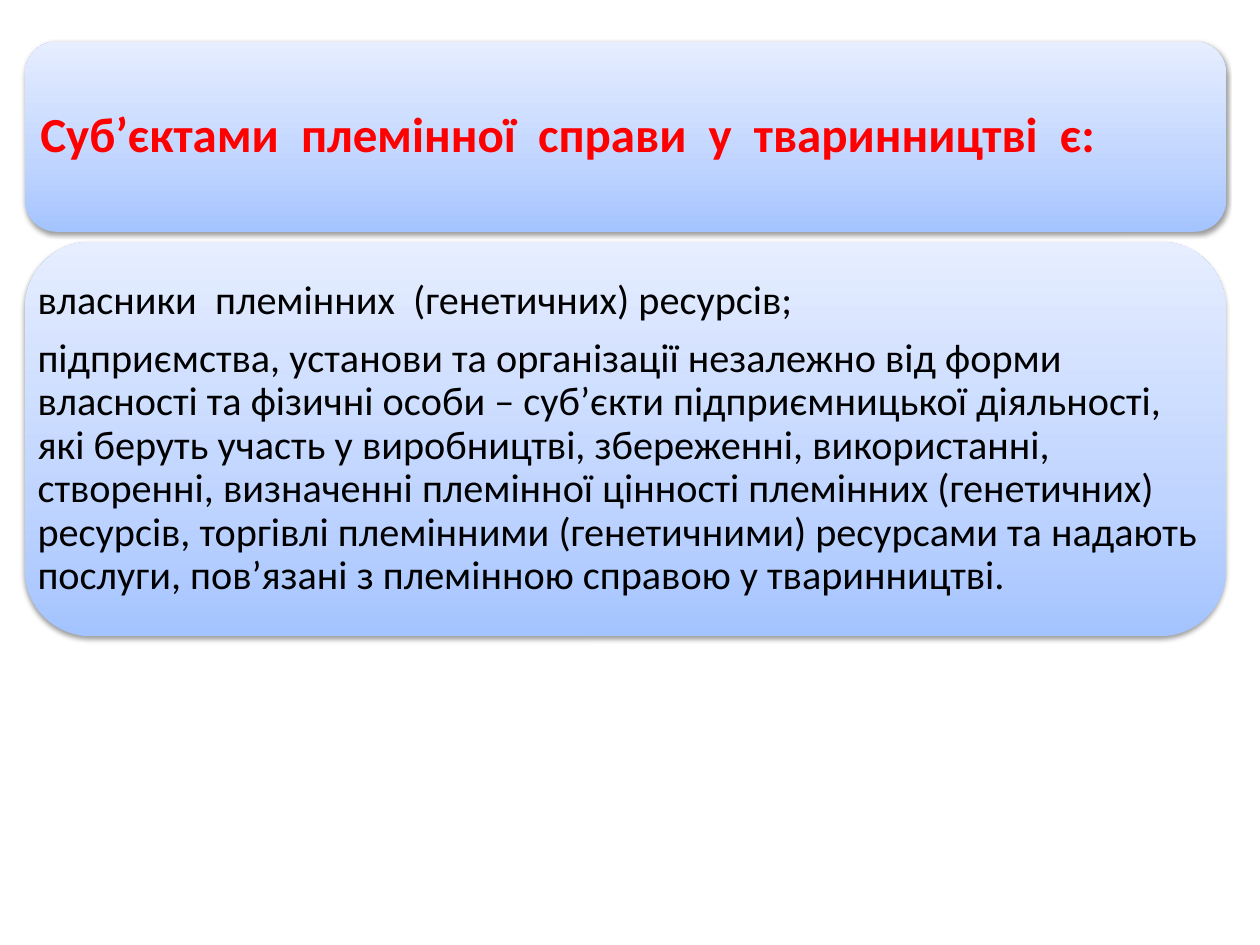
from lxml import etree
from pptx import Presentation
from pptx.dml.color import RGBColor
from pptx.enum import shapes, text
from pptx.oxml import ns
from pptx.util import Inches, Pt

GRADIENT = [(0, "A4C4FF"), (0.35, "BFD4FF"), (1, "E6EEFF")]


def add_child(parent, tag, **attributes):
    return etree.SubElement(parent, ns.qn(tag), {k: str(v) for k, v in attributes.items()})


def style_panel(panel):
    """Give a panel the upward blue gradient, no outline and a soft shadow below."""
    panel.fill.gradient()
    panel.fill.gradient_angle = 90
    properties = panel._element.spPr
    stops = properties.find(".//" + ns.qn("a:gsLst"))
    for old_stop in list(stops):
        stops.remove(old_stop)
    for position, color in GRADIENT:
        stop = add_child(stops, "a:gs", pos=round(position * 100000))
        add_child(stop, "a:srgbClr", val=color)

    panel.line.fill.background()
    panel.shadow.inherit = False
    shadow = add_child(properties.find(ns.qn("a:effectLst")), "a:outerShdw",
                       blurRad=Pt(3.1), dist=Pt(1.6), dir=5400000, rotWithShape=0)
    shadow_color = add_child(shadow, "a:srgbClr", val="000000")
    add_child(shadow_color, "a:alpha", val=38000)


heading = "Суб’єктами  племінної  справи  у  тваринництві  є:"
subjects = [
    "власники  племінних  (генетичних) ресурсів;",
    "підприємства, установи та організації незалежно від форми власності та фізичні "
    "особи – суб’єкти підприємницької діяльності, які беруть участь у виробництві, "
    "збереженні, використанні, створенні, визначенні племінної цінності племінних "
    "(генетичних) ресурсів, торгівлі племінними (генетичними) ресурсами та надають "
    "послуги, пов’язані з племінною справою у тваринництві.",
]

# top, height, text inset, paragraphs, size, color, bold
panels = [
    (0.33, 1.51, 0.12, [heading], 28, "FF0000", True),
    (1.92, 3.13, 0.1, subjects, 23, "000000", False),
]

prs = Presentation()
prs.slide_width, prs.slide_height = Inches(10), Inches(7.5)
slide = prs.slides.add_slide(prs.slide_layouts[6])

for top, height, inset, lines, size, color, bold in panels:
    area = Inches(0.2), Inches(top), Inches(9.53), Inches(height)
    style_panel(slide.shapes.add_shape(shapes.MSO_SHAPE.ROUNDED_RECTANGLE, *area))

    frame = slide.shapes.add_textbox(*area).text_frame
    frame.word_wrap = True
    frame.vertical_anchor = text.MSO_ANCHOR.MIDDLE
    frame.margin_left = frame.margin_right = Inches(inset)
    frame.margin_top = frame.margin_bottom = Inches(inset)
    frame.text = "\n".join(lines)
    for paragraph in frame.paragraphs:
        paragraph.line_spacing = 0.9
        paragraph.space_after = Pt(size * 0.35)
        font = paragraph.runs[0].font
        font.name, font.size, font.bold = "Calibri", Pt(size), bold
        font.color.rgb = RGBColor.from_string(color)

prs.save("out.pptx")
